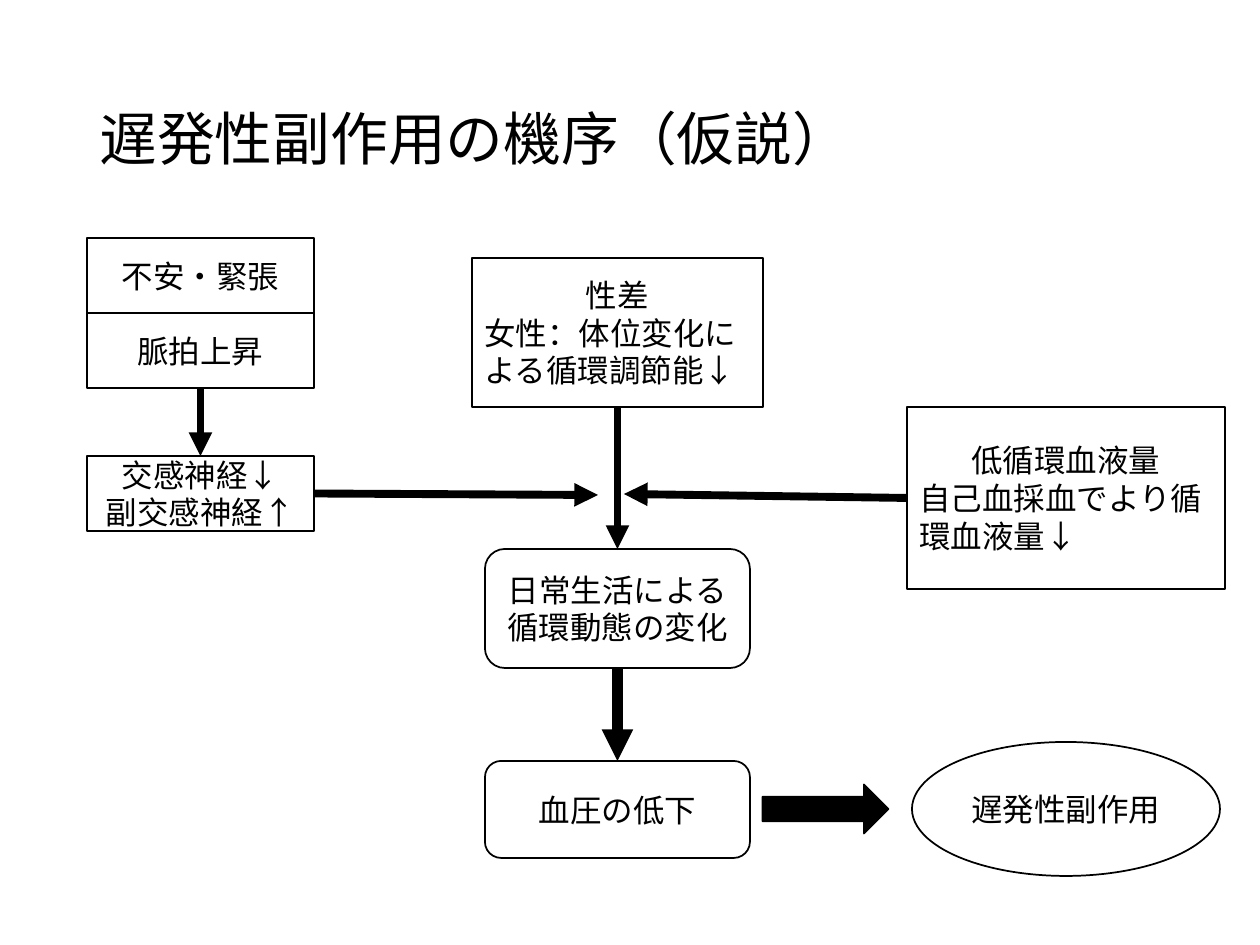
import pptx
import pptx.dml.color
import pptx.enum.shapes
import pptx.enum.text
import pptx.oxml
import pptx.oxml.ns
import pptx.util

EMU_PER_PX = 914400 // 126
BLACK, WHITE = "000000", "FFFFFF"
TOP, LEFT, BOTTOM, RIGHT = range(4)
SHAPE = pptx.enum.shapes.MSO_SHAPE
ALIGN = pptx.enum.text.PP_ALIGN


def px(*lengths):
    return [pptx.util.Emu(length * EMU_PER_PX) for length in lengths]


def color(value):
    return pptx.dml.color.RGBColor.from_string(value)


def set_values(target, values):
    for name, value in values.items():
        setattr(target, name, value)


class FlowPage:
    font = "Arial"
    title_size = 33
    body_size = 18

    def __init__(self, deck):
        self.page = deck.slides.add_slide(deck.slide_layouts[6])

    def add_text(self, frame, paragraphs, size):
        """Fill a frame with (text, alignment) paragraphs."""
        set_values(frame, {
            "word_wrap": True,
            "vertical_anchor": pptx.enum.text.MSO_ANCHOR.MIDDLE,
        })
        for index, (text, align) in enumerate(paragraphs):
            para = frame.add_paragraph() if index else frame.paragraphs[0]
            para.alignment = align
            span = para.add_run()
            span.text = text
            set_values(span.font, {"name": self.font, "size": pptx.util.Pt(size)})
            span.font.color.rgb = color(BLACK)

    def title(self, text, *place):
        box = self.page.shapes.add_textbox(*px(*place))
        self.add_text(box.text_frame, [(text, ALIGN.LEFT)], self.title_size)
        box.text_frame.paragraphs[0].line_spacing = 0.9

    def shape(self, kind, place, fill=WHITE):
        box = self.page.shapes.add_shape(kind, *px(*place))
        box.shadow.inherit = False
        box.fill.solid()
        box.fill.fore_color.rgb = color(fill)
        box.line.color.rgb = color(BLACK)
        box.line.width = pptx.util.Pt(1)
        return box

    def node(self, kind, place, centered, detail=None):
        """Box with centred lines and an optional left-aligned detail."""
        box = self.shape(kind, place)
        paragraphs = [(text, ALIGN.CENTER) for text in centered]
        if detail:
            paragraphs.append((detail, ALIGN.LEFT))
        self.add_text(box.text_frame, paragraphs, self.body_size)
        return box

    def arrow(self, start, side, end, width=4.5):
        """Arrow from a box side to the top of a box or to a free point."""
        free_end = isinstance(end, tuple)
        tip = px(*end) if free_end else (end.left, end.top)
        line = self.page.shapes.add_connector(
            pptx.enum.shapes.MSO_CONNECTOR.STRAIGHT, start.left, start.top, *tip)
        line.begin_connect(start, side)
        if not free_end:
            line.end_connect(end, TOP)
        line.line.color.rgb = color(BLACK)
        line.line.width = pptx.util.Pt(width)
        outline = line._element.spPr.get_or_add_ln()
        namespace = pptx.oxml.ns.nsdecls("a")
        outline.append(pptx.oxml.parse_xml(f'<a:tailEnd {namespace} type="triangle"/>'))
        outline.addnext(pptx.oxml.parse_xml(f"<a:effectLst {namespace}/>"))

    def block_arrow(self, *place):
        self.shape(SHAPE.DOWN_ARROW, place, BLACK).rotation = 270


def main():
    deck = pptx.Presentation()
    deck.slide_width, deck.slide_height = px(1260, 945)
    flow = FlowPage(deck)
    flow.title("遅発性副作用の機序（仮説）", 87, 50, 1086, 183)

    # Nervous system causes, in the left column
    anxiety, pulse, nerves = [
        flow.node(SHAPE.RECTANGLE, (87, top, 227, 75), lines)
        for top, lines in (
            (238, ["不安・緊張"]),
            (313, ["脈拍上昇"]),
            (456, ["交感神経↓", "副交感神経↑"]),
        )
    ]

    # Sex difference and blood volume
    sex = flow.node(SHAPE.RECTANGLE, (472, 258, 291, 149),
                    ["性差"], "女性：体位変化による循環調節能↓")
    volume = flow.node(SHAPE.RECTANGLE, (907, 407, 318, 182),
                       ["低循環血液量"], "自己血採血でより循環血液量↓")

    # Course down to the reaction
    change, pressure = [
        flow.node(SHAPE.ROUNDED_RECTANGLE, (485, top, 265, height), [text])
        for top, height, text in (
            (549, 119, "日常生活による循環動態の変化"),
            (761, 97, "血圧の低下"),
        )
    ]
    flow.node(SHAPE.OVAL, (912, 742, 308, 134), ["遅発性副作用"])

    # Arrows
    flow.arrow(pulse, BOTTOM, nerves)
    flow.arrow(sex, BOTTOM, change)
    flow.arrow(nerves, RIGHT, (598, 495))
    flow.arrow(volume, LEFT, (624, 494))
    flow.arrow(change, BOTTOM, pressure, width=6)
    flow.block_arrow(801, 746, 49, 126)

    deck.save("out.pptx")


if __name__ == "__main__":
    main()
